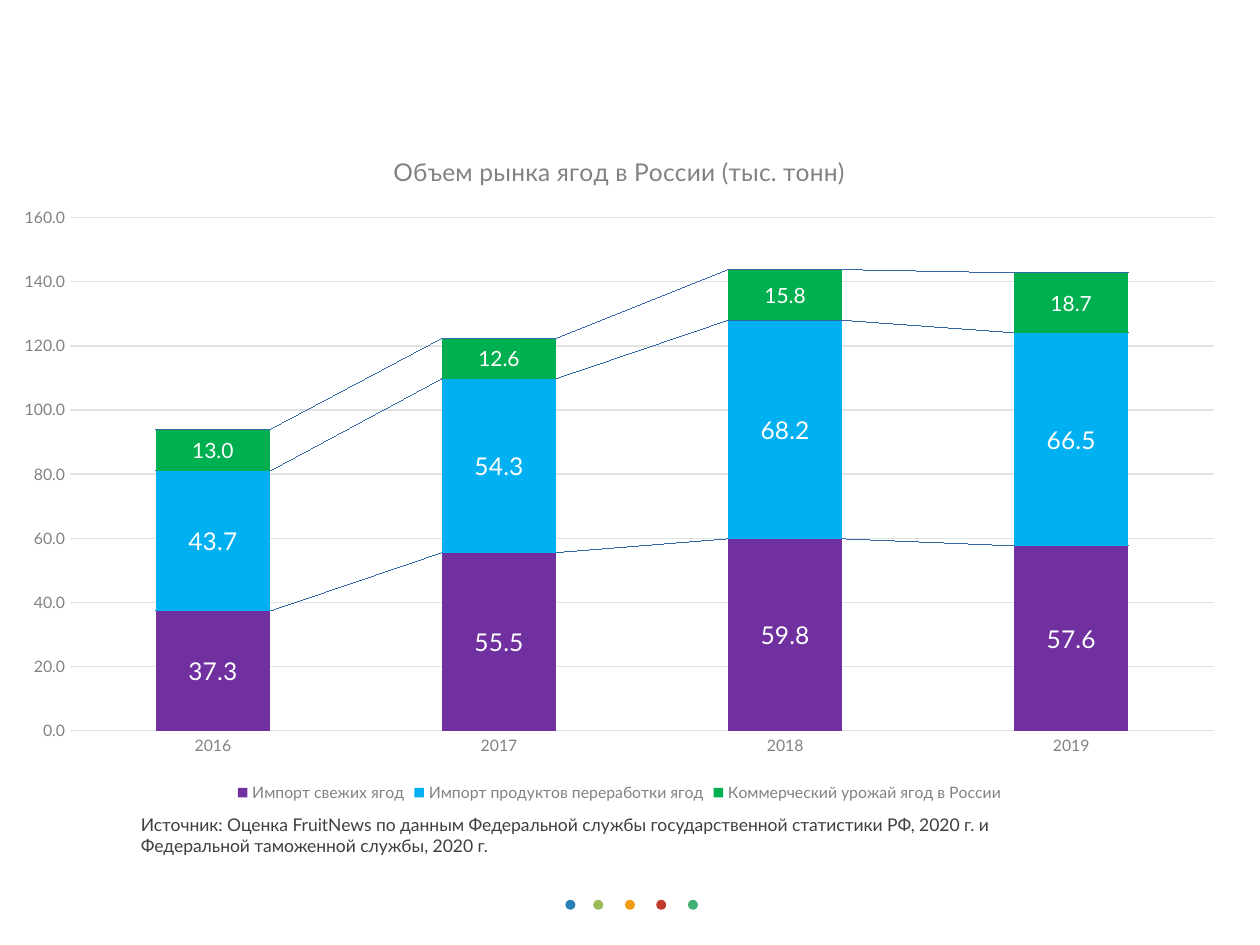
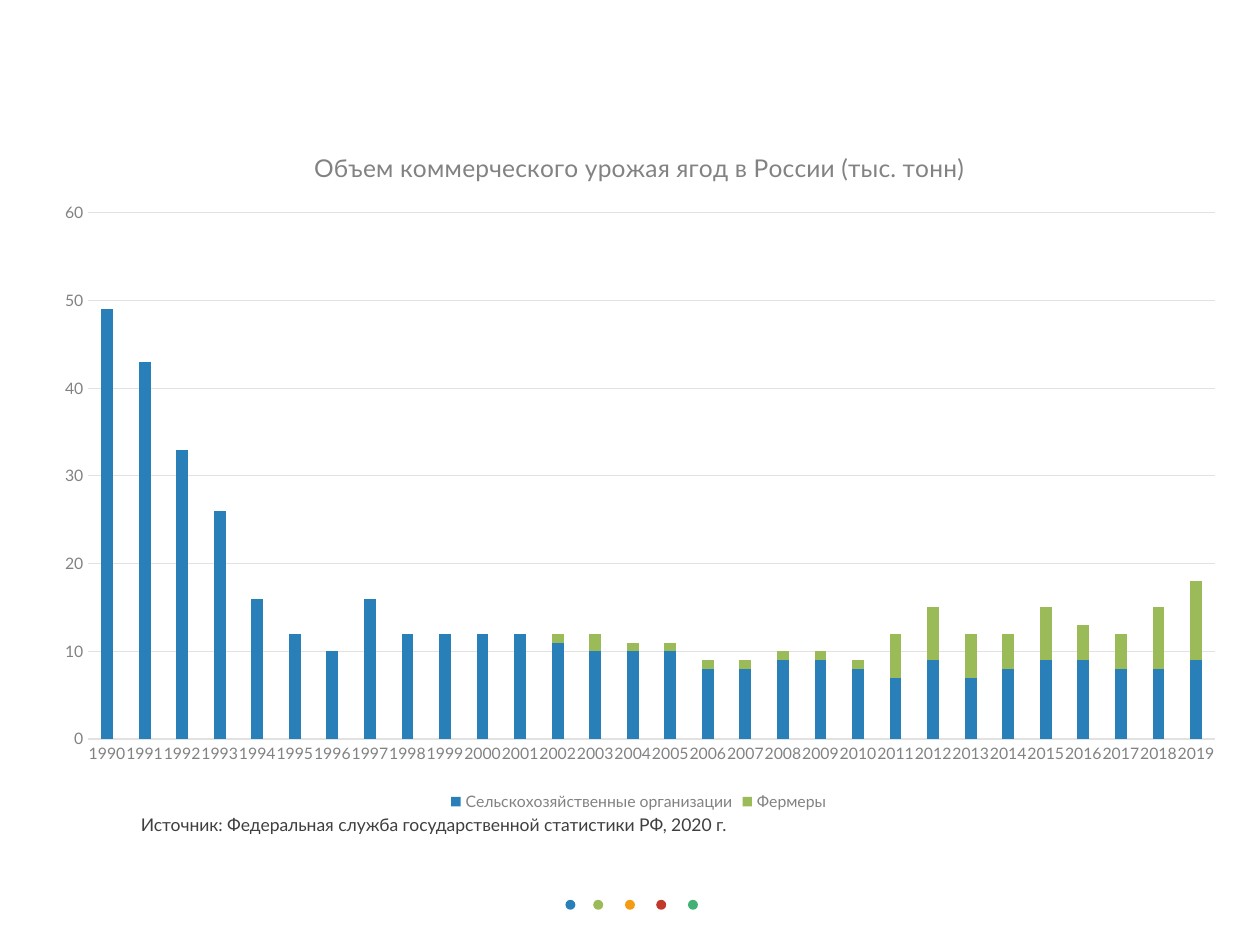
from lxml import etree
from pptx import Presentation
from pptx.chart.data import CategoryChartData
from pptx.dml.color import RGBColor
from pptx.enum.chart import XL_CHART_TYPE, XL_LABEL_POSITION, XL_LEGEND_POSITION, XL_TICK_MARK
from pptx.enum.shapes import MSO_SHAPE
from pptx.oxml import parse_xml
from pptx.oxml.ns import nsdecls
from pptx.util import Cm, Pt

STACKED = XL_CHART_TYPE.COLUMN_STACKED
CENTER = XL_LABEL_POSITION.CENTER
BOTTOM = XL_LEGEND_POSITION.BOTTOM
NO_TICK = XL_TICK_MARK.NONE
OVAL = MSO_SHAPE.OVAL

FONT = "Lato"
TEXT, MUTED, GRID, WHITE = "3F3F3F", "828282", "E2E2E2", "FFFFFF"
BLUE, LIME = "2980B9", "9BBB59"
DOTS = [(11.4, BLUE), (11.96, LIME), (12.6, "F39C12"), (13.23, "C0392B"), (13.87, "41B176")]
DOT_TOP, DOT_SIZE = 18.14, 0.2
SOURCE_LEFT, SOURCE_TOP, SOURCE_WIDTH = 2.59, 16.28, 18.62

SLIDES = [
    {
        "title": "Объем рынка ягод в России (тыс. тонн)",
        "source": "Источник: Оценка FruitNews по данным Федеральной службы государственной "
                  "статистики РФ, 2020 г. и Федеральной таможенной службы, 2020 г.",
        "source_height": 1.12,
        "box": (0, 2.59, 24.97, 13.69),
        "title_place": (7.84, 0.41),
        "plot_place": (1.41, 1.8, 23.07, 10.34),
        "years": range(2016, 2020),
        "maximum": 160, "step": 20, "gap": 150, "number_format": "0.0",
        "series_lines": True,
        "series": [
            ("Импорт свежих ягод", "7030A0", 14, [37.3, 55.5, 59.8, 57.6]),
            ("Импорт продуктов переработки ягод", "00B0F0", 14, [43.7, 54.3, 68.2, 66.5]),
            ("Коммерческий урожай ягод в России", "00B050", 12, [13, 12.6, 15.8, 18.7]),
        ],
    },
    {
        "title": "Объем коммерческого урожая ягод в России (тыс. тонн)",
        "source": "Источник: Федеральная служба государственной статистики РФ, 2020 г.",
        "source_height": 0.69,
        "box": (0.81, 2.54, 24.13, 13.92),
        "title_place": (5.43, 0.38),
        "plot_place": (0.97, 1.75, 22.71, 10.61),
        "years": range(1990, 2020),
        "maximum": 60, "step": 10, "gap": 219, "number_format": "0",
        "series_lines": False,
        "series": [
            ("Сельскохозяйственные организации", BLUE, None,
             [49, 43, 33, 26, 16, 12, 10, 16, 12, 12,
              12, 12, 11, 10, 10, 10, 8, 8, 9, 9,
              8, 7, 9, 7, 8, 9, 9, 8, 8, 9]),
            ("Фермеры", LIME, None,
             [0, 0, 0, 0, 0, 0, 0, 0, 0, 0,
              0, 0, 1, 2, 1, 1, 1, 1, 1, 1,
              1, 5, 6, 5, 4, 6, 4, 4, 7, 9]),
        ],
    },
]


def color(value):
    return RGBColor.from_string(value)


def style_font(font, size, value):
    for name, setting in {"name": FONT, "size": Pt(size), "bold": False}.items():
        setattr(font, name, setting)
    font.color.rgb = color(value)


def fill(item, value):
    item.fill.solid()
    item.fill.fore_color.rgb = color(value)


def style_line(line, value):
    line.color.rgb = color(value)
    line.width = Pt(0.75)


def place(element, position, layout_target, lengths, box):
    for layout in element.xpath("c:layout"):
        element.remove(layout)
    layout = parse_xml(f"<c:layout {nsdecls('c')}><c:manualLayout/></c:layout>")
    settings = [("layoutTarget", layout_target)] if layout_target else []
    settings += [(f"{axis}Mode", "edge") for axis in "xy"]
    settings += [(name, length / whole)
                 for name, length, whole in zip("xywh", lengths, box[2:] * 2)]
    namespace = layout.nsmap["c"]
    for name, value in settings:
        etree.SubElement(layout[0], f"{{{namespace}}}{name}", val=str(value))
    element.insert(position, layout)


def add_series_lines(chart):
    lines = parse_xml(
        f'<c:serLines {nsdecls("c", "a")}><c:spPr><a:ln w="9525"><a:solidFill>'
        '<a:srgbClr val="3465A4"/></a:solidFill></a:ln></c:spPr></c:serLines>')
    chart.element.xpath("//c:barChart/c:overlap")[0].addnext(lines)


def style_axes(chart, content):
    for axis in (chart.category_axis, chart.value_axis):
        axis.major_tick_mark = axis.minor_tick_mark = NO_TICK
        style_font(axis.tick_labels.font, 9, MUTED)
    label_body = chart.element.xpath("//c:catAx/c:txPr/a:bodyPr")[0]
    label_body.set("rot", "-60000000")
    label_body.set("vert", "horz")
    style_line(chart.category_axis.format.line, GRID)
    value_axis = chart.value_axis
    settings = {"minimum_scale": 0, "maximum_scale": content["maximum"], "major_unit": content["step"]}
    for name, setting in settings.items():
        setattr(value_axis, name, setting)
    value_axis.format.line.fill.background()
    style_line(value_axis.major_gridlines.format.line, GRID)
    value_axis.tick_labels.number_format = content["number_format"]
    value_axis.tick_labels.number_format_is_linked = False


def style_series(plot, content):
    plot.gap_width, plot.overlap = content["gap"], 100
    plot.vary_by_categories = False
    for series, (_, value, label_size, _) in zip(plot.series, content["series"]):
        fill(series.format, value)
        if label_size:
            labels = series.data_labels
            settings = {"show_value": True, "position": CENTER,
                        "number_format": "0.0", "number_format_is_linked": False}
            for name, setting in settings.items():
                setattr(labels, name, setting)
            style_font(labels.font, label_size, WHITE)


def add_berry_chart(slide, content):
    data = CategoryChartData()
    data.categories = [str(year) for year in content["years"]]
    for name, _, _, values in content["series"]:
        data.add_series(name, values)
    box = content["box"]
    chart = slide.shapes.add_chart(STACKED, *map(Cm, box), data).chart
    style_font(chart.font, 10, TEXT)
    title = chart.chart_title
    title.text_frame.text = content["title"]
    style_font(title.text_frame.paragraphs[0].runs[0].font, 14, MUTED)
    title.include_in_layout = False
    chart.has_legend = True
    chart.legend.position = BOTTOM
    chart.legend.include_in_layout = False
    style_font(chart.legend.font, 9, MUTED)
    style_axes(chart, content)
    style_series(chart.plots[0], content)
    if content["series_lines"]:
        add_series_lines(chart)
    place(chart.element.xpath("c:chart/c:title")[0], 1, None, content["title_place"], box)
    place(chart.element.xpath("c:chart/c:plotArea")[0], 0, "inner", content["plot_place"], box)


def add_source(slide, content):
    box = slide.shapes.add_textbox(
        *map(Cm, (SOURCE_LEFT, SOURCE_TOP, SOURCE_WIDTH, content["source_height"])))
    box.text_frame.word_wrap = True
    run = box.text_frame.paragraphs[0].add_run()
    run.text = content["source"]
    style_font(run.font, 10, TEXT)


def add_dots(slide):
    group = slide.shapes.add_group_shape()
    for left, value in DOTS:
        dot = group.shapes.add_shape(OVAL, *map(Cm, (left, DOT_TOP, DOT_SIZE, DOT_SIZE)))
        dot.shadow.inherit = False
        fill(dot, value)
        dot.line.fill.background()


def main():
    presentation = Presentation()
    presentation.slide_width, presentation.slide_height = Cm(25.4), Cm(19.05)
    for content in SLIDES:
        slide = presentation.slides.add_slide(presentation.slide_layouts[6])
        add_dots(slide)
        add_berry_chart(slide, content)
        add_source(slide, content)
    presentation.save("out.pptx")


if __name__ == "__main__":
    main()
